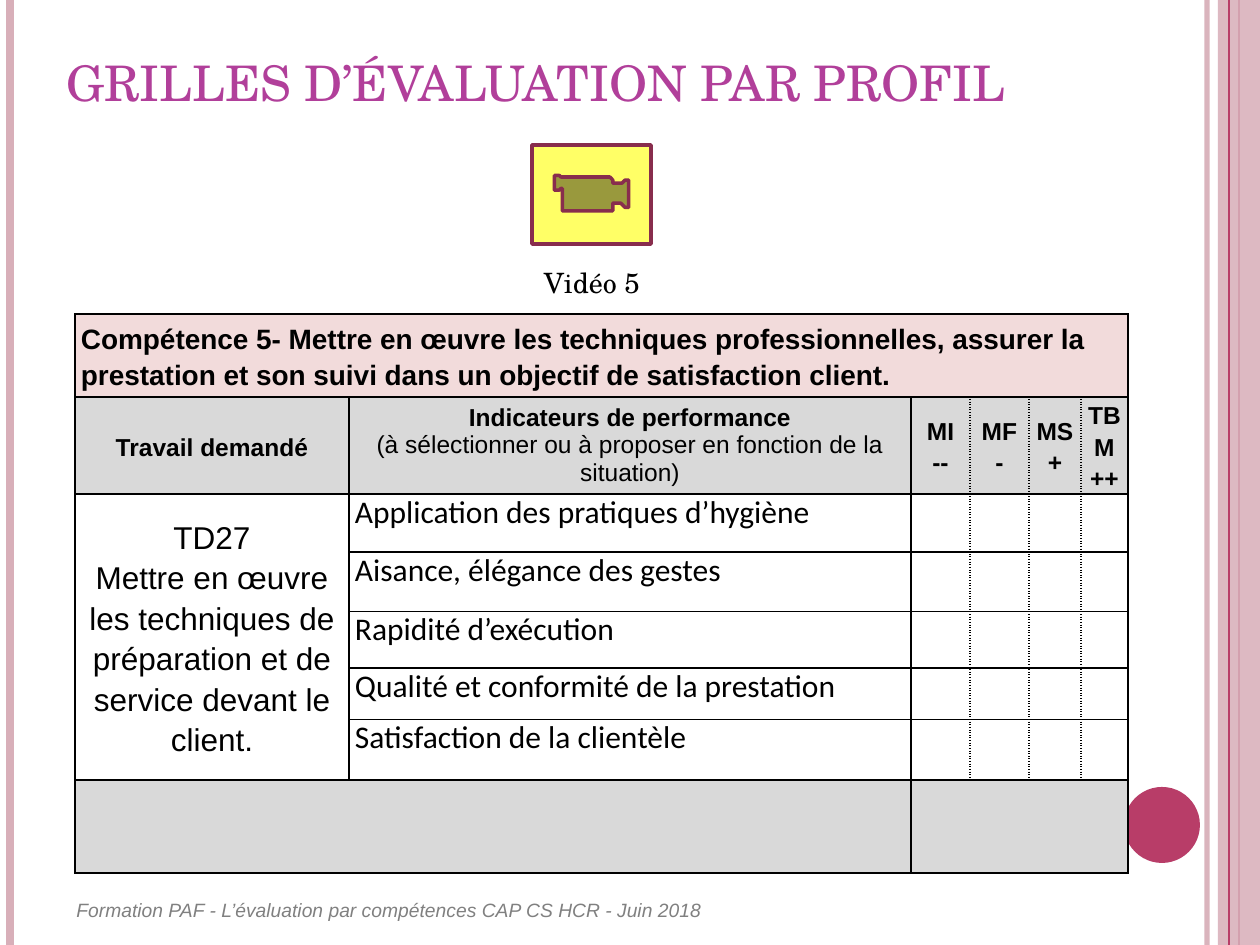
from itertools import pairwise

from lxml.etree import SubElement
from pptx import Presentation
from pptx.dml.color import RGBColor
from pptx.enum.shapes import MSO_CONNECTOR, MSO_SHAPE
from pptx.enum.text import MSO_ANCHOR, MSO_AUTO_SIZE, PP_ALIGN
from pptx.oxml.ns import qn
from pptx.util import Emu, Pt

HUES = {
    "black": "000000", "white": "FFFFFF", "grey": "808080",
    "pale": "D9D9D9", "blush": "F2DBDB", "rose": "D8AFB9",
    "berry": "B83D68", "wine": "882D4D", "plum": "B13F9A", "lemon": "FFFF66",
}
SERIF, SANS, BODY = "TeX Gyre Schola", "Arial", "Calibri"
WIDE, HIGH = 1260, 945
COLS = [75, 349, 911, 970, 1029, 1081, 1128]
ROWS = [314, 397, 494, 552, 611, 668, 719, 780, 873]
FINE = {4, 6}  # row edges drawn with a thinner rule
SKILL = ("Compétence 5- Mettre en œuvre les techniques professionnelles, assurer la "
         "prestation et son suivi dans un objectif de satisfaction client.")
TASK = "Mettre en œuvre les techniques de préparation et de service devant le client."
HINT = "(à sélectionner ou à proposer en fonction de la situation)"
GRADES = [("MI", "--"), ("MF", "-"), ("MS", "+"), ("TBM", "++")]
SIGNS = [
    "Application des pratiques d’hygiène",
    "Aisance, élégance des gestes",
    "Rapidité d’exécution",
    "Qualité et conformité de la prestation",
    "Satisfaction de la clientèle",
]


def px(count):
    return Emu(round(count * 914400 / 126))


def hue(name):
    return RGBColor.from_string(HUES[name])


def fade(part, pct):
    """Set the opacity of the colour held in an XML part."""
    color = next(part.iter(qn("a:srgbClr")))
    SubElement(color, qn("a:alpha"), val=str(pct * 1000))


def write(frame, lines, size, font=SANS, color="black", align=PP_ALIGN.LEFT,
          bold=False, italic=False, space=1.0):
    frame.word_wrap = True
    frame.text = "\n".join(lines)
    for para in frame.paragraphs:
        para.alignment, para.line_spacing = align, space
        face = para.font
        face.name, face.size = font, Pt(size)
        face.bold, face.italic = bold, italic
        face.color.rgb = hue(color)


def add_rule(slide, x, width, color, alpha=None):
    rule = slide.shapes.add_connector(MSO_CONNECTOR.STRAIGHT, px(x), 0, px(x), px(HIGH))
    rule.line.color.rgb = hue(color)
    rule.line.width = Pt(width)
    props = rule._element.spPr
    SubElement(props, qn("a:effectLst"))
    if alpha:
        fade(props, alpha)


def add_box(slide, kind, box, fill, line=None):
    shape = slide.shapes.add_shape(kind, *map(px, box))
    shape.shadow.inherit = False
    shape.fill.solid()
    shape.fill.fore_color.rgb = hue(fill)
    if line:
        shape.line.color.rgb = hue(line)
        shape.line.width = Pt(2)
    else:
        shape.line.fill.background()
    return shape


def add_frame(slide):
    """Draw the side bands and the dot behind the content."""
    add_rule(slide, 1207, 3, "rose", 93)
    add_rule(slide, 10, 4.5, "rose")
    add_rule(slide, 1239, 1.5, "berry")
    band = add_box(slide, MSO_SHAPE.RECTANGLE, (1218, 0, 42, HIGH), "rose")
    fade(band._element.spPr, 87)
    add_rule(slide, 1229, 0.75, "berry")
    add_box(slide, MSO_SHAPE.OVAL, (1124, 787, 76, 76), "berry")


def add_title(slide):
    title = slide.shapes.title
    title.left, title.top, title.width, title.height = map(px, (54, 37, 1111, 81))
    frame = title.text_frame
    frame.auto_size = MSO_AUTO_SIZE.NONE
    frame.vertical_anchor = MSO_ANCHOR.BOTTOM
    write(frame, ["GRILLES D’ÉVALUATION PAR PROFIL"], 28, SERIF, "plum")


def rule_cell(cell, row, col):
    """Dot the edges between grades and thin the fine row edges."""
    edges = {
        "L": (1, 1 <= row <= 6 and col >= 3),
        "R": (1, 1 <= row <= 6 and 2 <= col <= 4),
        "T": (0.5 if row in FINE else 1, False),
        "B": (0.5 if row + 1 in FINE else 1, False),
    }
    props = cell._tc.get_or_add_tcPr()
    for side, (width, dotted) in edges.items():
        line = SubElement(props, qn(f"a:ln{side}"), w=str(Pt(width)))
        fill = SubElement(line, qn("a:solidFill"))
        SubElement(fill, qn("a:srgbClr"), val=HUES["black"])
        SubElement(line, qn("a:prstDash"), val="sysDot" if dotted else "solid")


def style_cell(cell, row, col):
    rule_cell(cell, row, col)
    cell.margin_left = cell.margin_right = px(6)
    cell.margin_top = cell.margin_bottom = 0
    shade = {0: "blush", 1: "pale", 7: "pale"}.get(row)
    if shade:
        cell.fill.solid()
        cell.fill.fore_color.rgb = hue(shade)
    else:
        cell.fill.background()
    if row < 2 or col == 0:
        cell.vertical_anchor = MSO_ANCHOR.MIDDLE


def add_grid(slide):
    box = COLS[0], ROWS[0], COLS[-1] - COLS[0], ROWS[-1] - ROWS[0]
    table = slide.shapes.add_table(len(ROWS) - 1, len(COLS) - 1, *map(px, box)).table
    table.first_row = table.horz_banding = False
    for col, (left, right) in zip(table.columns, pairwise(COLS)):
        col.width = px(right - left)
    for row, (top, base) in zip(table.rows, pairwise(ROWS)):
        row.height = px(base - top)
    for r in range(len(table.rows)):
        for c in range(len(table.columns)):
            style_cell(table.cell(r, c), r, c)
    for start, end in [((0, 0), (0, 5)), ((2, 0), (6, 0)), ((7, 0), (7, 1)), ((7, 2), (7, 5))]:
        table.cell(*start).merge(table.cell(*end))
    fill_grid(table)


def fill_grid(table):
    def put(row, col, lines, size, **style):
        write(table.cell(row, col).text_frame, lines, size, **style)

    mid = {"align": PP_ALIGN.CENTER, "space": 1.15}
    put(0, 0, [SKILL], 16, bold=True, space=1.15)
    put(1, 0, ["Travail demandé"], 14, bold=True, **mid)
    put(1, 1, ["Indicateurs de performance", HINT], 14, align=PP_ALIGN.CENTER)
    table.cell(1, 1).text_frame.paragraphs[0].font.bold = True
    for col, grade in enumerate(GRADES, 2):
        put(1, col, grade, 14, bold=True, **mid)
    put(2, 0, ["TD27", TASK], 18, **mid)
    for row, sign in enumerate(SIGNS, 2):
        put(row, 1, [sign], 18, font=BODY)


def add_label(slide, box, text, size, line=None, **style):
    label = add_box(slide, MSO_SHAPE.RECTANGLE, box, "white", line)
    label.text_frame.vertical_anchor = MSO_ANCHOR.MIDDLE
    write(label.text_frame, [text], size, **style)


def main():
    deck = Presentation()
    deck.slide_width, deck.slide_height = px(WIDE), px(HIGH)
    slide = deck.slides.add_slide(deck.slide_layouts[5])
    add_frame(slide)
    add_grid(slide)
    add_title(slide)
    add_box(slide, MSO_SHAPE.ACTION_BUTTON_MOVIE, (532, 145, 119, 99), "lemon", "wine")
    add_label(slide, (488, 255, 208, 54), "Vidéo 5", 16, "white",
              font=SERIF, align=PP_ALIGN.CENTER)
    add_label(slide, (64, 890, 1111, 39),
              "Formation PAF - L’évaluation par compétences CAP CS HCR - Juin 2018",
              11, color="grey", italic=True)
    deck.save("out.pptx")


if __name__ == "__main__":
    main()
